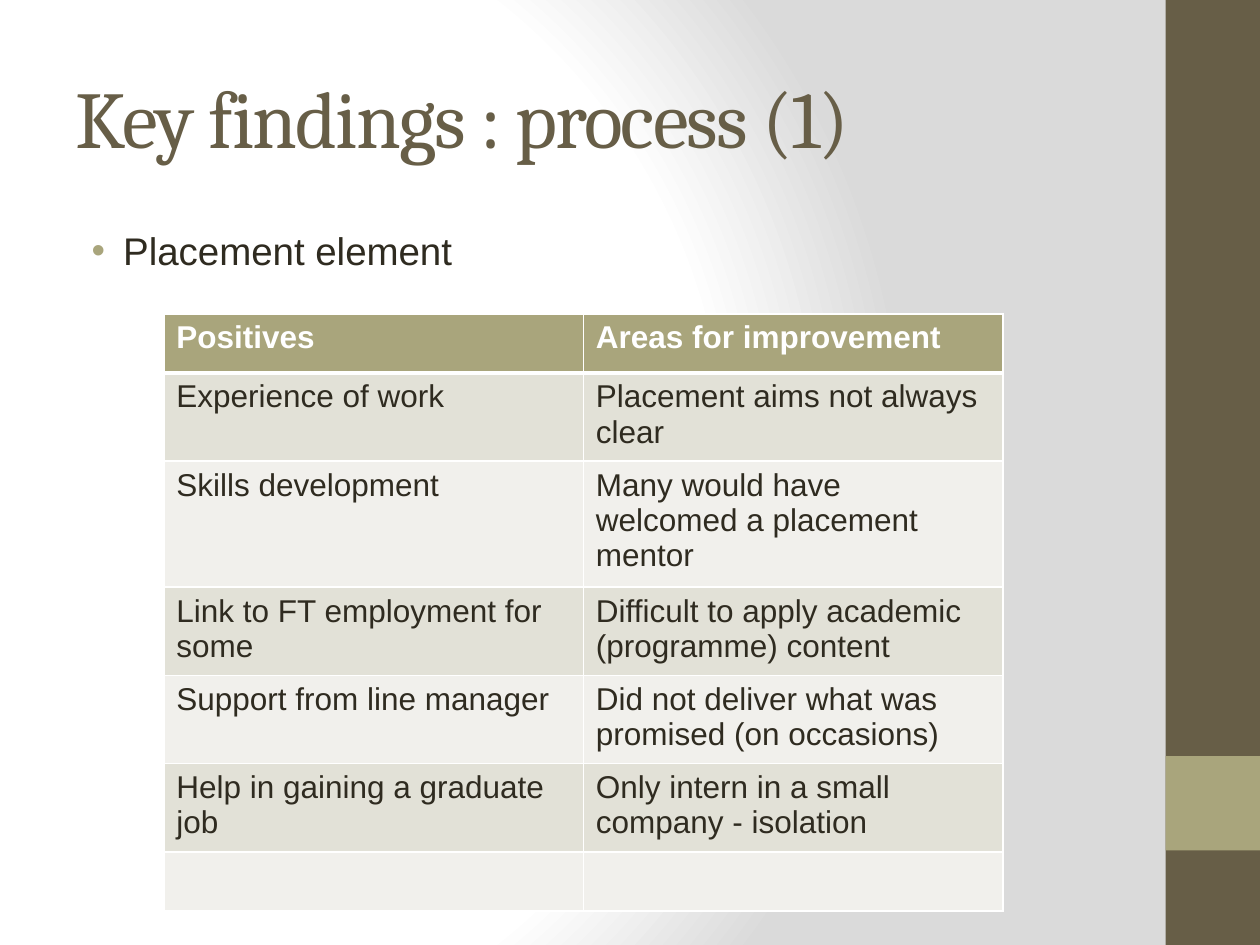
"""Build a slide with a findings table beside a two-tone side band."""
from lxml import etree
from pptx import Presentation, oxml
from pptx.dml.color import RGBColor
from pptx.enum import shapes, text
from pptx.oxml import ns
from pptx.util import Inches, Pt


def paint(fill, hue):
    fill.solid()
    fill.fore_color.rgb = RGBColor.from_string(hue)


def write(frame, words, size=18, font="Arial", hue="2F2B20", bold=False):
    para = frame.paragraphs[0]
    para.alignment = text.PP_ALIGN.LEFT
    run = para.add_run()
    run.text = words
    run.font.size, run.font.name, run.font.bold = Pt(size), font, bold
    paint(run.font.fill, hue)
    return para, run


deck = Presentation()
deck.slide_width, deck.slide_height = Inches(10), Inches(7.5)
slide = deck.slides.add_slide(deck.slide_layouts[5])

stops = "".join(
    f'<a:gs pos="{pos}000"><a:srgbClr val="{hue}"/></a:gs>'
    for pos, hue in [(0, "FFFFFF"), (75, "FFFFFF"), (100, "DADADA")]
)
back = oxml.parse_xml(
    f'<p:bg {ns.nsdecls("p", "a")}><p:bgPr><a:gradFill rotWithShape="1">'
    f'<a:gsLst>{stops}</a:gsLst><a:path path="circle">'
    '<a:fillToRect l="20000" t="50000" r="100000" b="50000"/></a:path>'
    '</a:gradFill><a:effectLst/></p:bgPr></p:bg>'
)
slide._element.cSld.insert(0, back)

for top, high, hue in [(0, 7.5, "675E47"), (6, 0.75, "A9A57C")]:
    band = slide.shapes.add_shape(
        shapes.MSO_SHAPE.RECTANGLE, Inches(9.25), Inches(top), Inches(0.75), Inches(high)
    )
    band.shadow.inherit = False
    band.line.fill.background()
    paint(band.fill, hue)

title = slide.shapes.title
title.left, title.top = Inches(0.5), Inches(0.3)
title.width, title.height = Inches(8.33), Inches(1.25)
frame = title.text_frame
frame.auto_size = text.MSO_AUTO_SIZE.NONE
frame.vertical_anchor = text.MSO_ANCHOR.MIDDLE
para, run = write(frame, "Key findings : process (1)", size=46, font="Cambria", hue="675E47")
run.font._element.set("spc", "-100")

body = slide.shapes.add_textbox(Inches(0.5), Inches(1.75), Inches(8.33), Inches(5.25))
body.text_frame.word_wrap = True
para, run = write(body.text_frame, "Placement element", size=22)
props = para._p.get_or_add_pPr()
props.set("marL", str(Inches(0.38)))
props.set("indent", str(Inches(-0.25)))
tint = etree.SubElement(props, ns.qn("a:buClr"))
etree.SubElement(tint, ns.qn("a:srgbClr"), val="A9A57C")
etree.SubElement(props, ns.qn("a:buFont"), typeface="Arial")
etree.SubElement(props, ns.qn("a:buChar"), char="•")

rows = [
    ("Positives", "Areas for improvement"),
    ("Experience of work", "Placement aims not always clear"),
    ("Skills development", "Many would have welcomed a placement mentor"),
    ("Link to FT employment for some", "Difficult to apply academic (programme) content"),
    ("Support from line manager", "Did not deliver what was promised (on occasions)"),
    ("Help in gaining a graduate job", "Only intern in a small company - isolation"),
    ("", ""),
]
holder = slide.shapes.add_table(
    len(rows), 2, Inches(1.3), Inches(2.49), Inches(6.67), Inches(4.75)
)
table = holder.table
for col in table.columns:
    col.width = Inches(3.33)
for i, pair in enumerate(rows):
    table.rows[i].height = Inches(0.47)
    head = i == 0
    shade = "A9A57C" if head else ("F1F0EC", "E2E1D7")[i % 2]
    for j, words in enumerate(pair):
        cell = table.cell(i, j)
        if words:
            write(cell.text_frame, words, hue="FFFFFF" if head else "2F2B20", bold=head)
        edges = cell._tc.get_or_add_tcPr()
        for side in "LRTB":
            thick = 3 if (i, side) in [(0, "B"), (1, "T")] else 1
            edge = etree.SubElement(edges, ns.qn(f"a:ln{side}"), w=str(Pt(thick)))
            solid = etree.SubElement(edge, ns.qn("a:solidFill"))
            etree.SubElement(solid, ns.qn("a:srgbClr"), val="FFFFFF")
        paint(cell.fill, shade)
holder.height = Inches(4.75)

deck.save("out.pptx")
